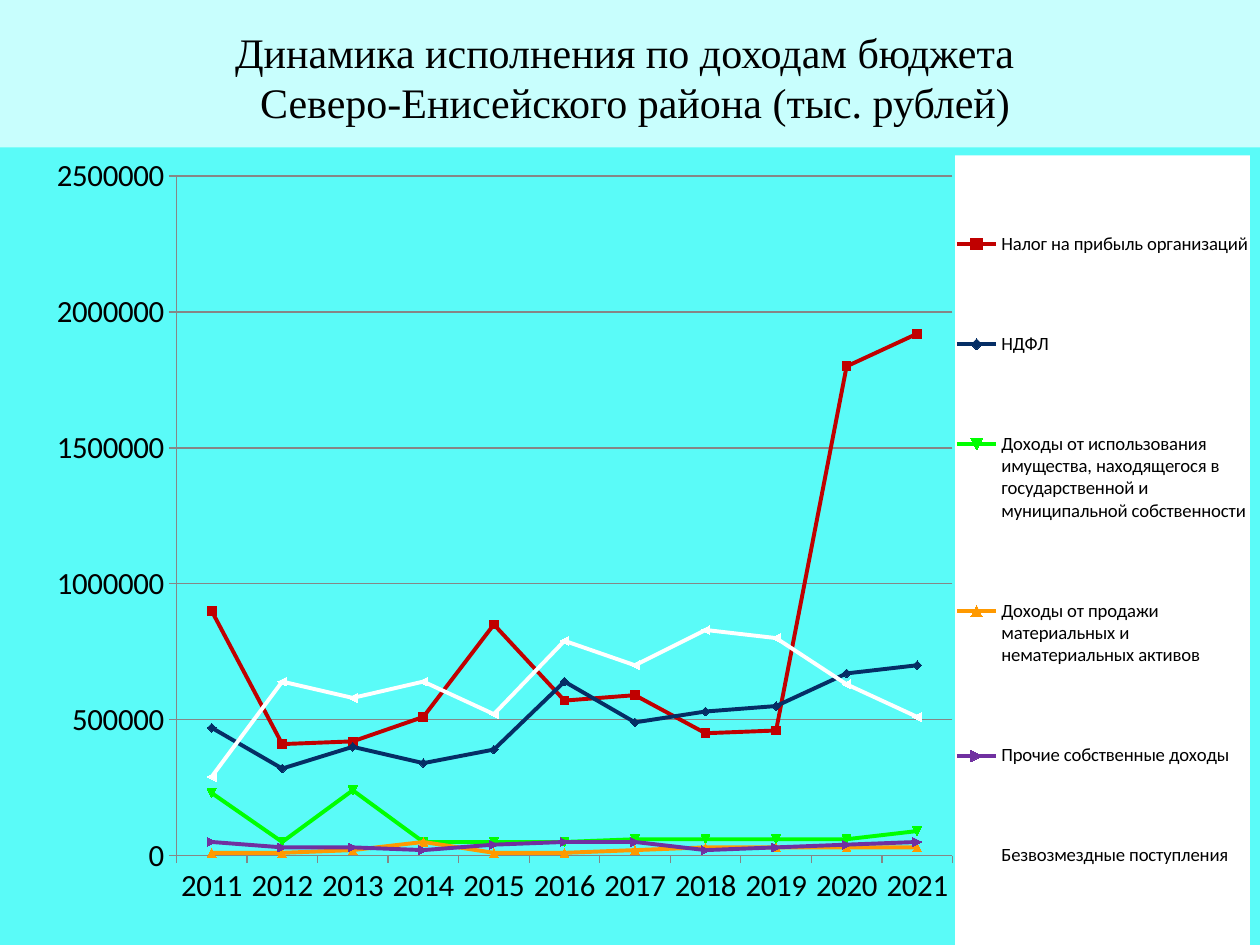
import pptx
import pptx.chart.data
import pptx.dml.color
import pptx.enum.chart
import pptx.enum.text
import pptx.oxml
import pptx.oxml.ns
import pptx.util

TITLE_LINES = [
    "Динамика исполнения по доходам бюджета ",
    " Северо-Енисейского района (тыс. рублей)",
]
YEARS = [str(year) for year in range(2011, 2022)]
# name, line colour, values in tens of thousands
REVENUES = [
    ("Налог на прибыль организаций", "C00000",
     [90, 41, 42, 51, 85, 57, 59, 45, 46, 180, 192]),
    ("НДФЛ", "052E65",
     [47, 32, 40, 34, 39, 64, 49, 53, 55, 67, 70]),
    ("Доходы от использования имущества, находящегося в "
     "государственной и муниципальной собственности", "00FF00",
     [23, 5, 24, 5, 5, 5, 6, 6, 6, 6, 9]),
    ("Доходы от продажи материальных и нематериальных активов", "FF9900",
     [1, 1, 2, 5, 1, 1, 2, 3, 3, 3, 3]),
    ("Прочие собственные доходы", "7030A0",
     [5, 3, 3, 2, 4, 5, 5, 2, 3, 4, 5]),
    ("Безвозмездные поступления", "FFFFFF",
     [29, 64, 58, 64, 52, 79, 70, 83, 80, 63, 51]),
]
UNIT = 10000
THEME = {
    "background": "C8FEFD", "chart": "5AFBF8", "legend": "FFFFFF",
    "text": "000000", "axis": "868686",
    "title_font": "Times New Roman", "chart_font": "Calibri",
    "title_size": 24, "axis_size": 17.6, "legend_size": 10.7,
    "line_width": 2.25, "axis_width": 0.75, "marker_size": 5,
}
WIDTH, HEIGHT = 10, 7.5
TITLE_BOX = (0, 0.16, WIDTH, 0.91)
CHART_TOP = 1.17
# x, y, width, height as shares of the chart
PLOT_SHARE = (0.14, 0.036, 0.616, 0.852)
LEGEND_SHARE = (0.758, 0.01, 0.234, 0.99)


def rgb(name):
    return pptx.dml.color.RGBColor.from_string(name)


def inches(*lengths):
    return [pptx.util.Inches(length) for length in lengths]


def style_font(font, size, face):
    font.size = pptx.util.Pt(size)
    font.name = face
    font.color.rgb = rgb(THEME["text"])


def style_line(line, colour, width):
    line.color.rgb = rgb(colour)
    line.width = pptx.util.Pt(width)


def manual_layout(shares, inner=False):
    target = '<c:layoutTarget val="inner"/>' if inner else ""
    modes = "".join(f'<c:{axis}Mode val="edge"/>' for axis in "xy")
    sizes = "".join(f'<c:{key} val="{share}"/>' for key, share in zip("xywh", shares))
    return pptx.oxml.parse_xml(
        f'<c:layout {pptx.oxml.ns.nsdecls("c")}><c:manualLayout>'
        f"{target}{modes}{sizes}</c:manualLayout></c:layout>")


def solid_area(colour):
    return pptx.oxml.parse_xml(
        f'<c:spPr {pptx.oxml.ns.nsdecls("c", "a")}><a:solidFill>'
        f'<a:srgbClr val="{colour}"/></a:solidFill><a:ln><a:noFill/></a:ln></c:spPr>')


def drop_layout(parent):
    for layout in parent.findall(pptx.oxml.ns.qn("c:layout")):
        parent.remove(layout)


def add_title(slide):
    title = slide.shapes.add_textbox(*inches(*TITLE_BOX)).text_frame
    title.word_wrap = True
    paragraph = title.paragraphs[0]
    paragraph.alignment = pptx.enum.text.PP_ALIGN.CENTER
    for index, line in enumerate(TITLE_LINES):
        if index:
            paragraph.add_line_break()
        run = paragraph.add_run()
        run.text = line
        style_font(run.font, THEME["title_size"], THEME["title_font"])


def style_axes(chart):
    for axis in (chart.category_axis, chart.value_axis):
        axis.major_tick_mark = pptx.enum.chart.XL_TICK_MARK.OUTSIDE
        axis.minor_tick_mark = pptx.enum.chart.XL_TICK_MARK.NONE
        style_line(axis.format.line, THEME["axis"], THEME["axis_width"])
    values = chart.value_axis
    values.minimum_scale, values.maximum_scale, values.major_unit = 0, 2500000, 500000
    values.has_major_gridlines = True
    style_line(values.major_gridlines.format.line, THEME["axis"], THEME["axis_width"])


def style_legend(chart):
    chart.has_legend = True
    legend = chart.legend
    legend.position = pptx.enum.chart.XL_LEGEND_POSITION.RIGHT
    legend.include_in_layout = False
    style_font(legend.font, THEME["legend_size"], THEME["chart_font"])
    root = legend._element
    drop_layout(root)
    overlay = root.find(pptx.oxml.ns.qn("c:overlay"))
    overlay.addprevious(manual_layout(LEGEND_SHARE))
    overlay.addnext(solid_area(THEME["legend"]))


def add_revenue_chart(slide):
    revenue = pptx.chart.data.CategoryChartData(number_format="General")
    revenue.categories = YEARS
    for name, _, values in REVENUES:
        revenue.add_series(name, [value * UNIT for value in values])
    chart = slide.shapes.add_chart(
        pptx.enum.chart.XL_CHART_TYPE.LINE_MARKERS,
        *inches(0, CHART_TOP, WIDTH, HEIGHT - CHART_TOP), revenue).chart
    chart.has_title = False
    style_font(chart.font, THEME["axis_size"], THEME["chart_font"])
    style_axes(chart)
    style_legend(chart)

    plot = chart.plots[0]
    plot.vary_by_categories = False
    for series, (_, colour, _) in zip(plot.series, REVENUES):
        series.smooth = False
        style_line(series.format.line, colour, THEME["line_width"])
        series.marker.size = THEME["marker_size"]
        series.marker.format.fill.solid()
        series.marker.format.fill.fore_color.rgb = rgb(colour)
        style_line(series.marker.format.line, colour, THEME["axis_width"])

    chart_part = chart._chartSpace.find(pptx.oxml.ns.qn("c:chart"))
    chart_part.addnext(solid_area(THEME["chart"]))
    plot_area = chart_part.find(pptx.oxml.ns.qn("c:plotArea"))
    drop_layout(plot_area)
    plot_area.insert(0, manual_layout(PLOT_SHARE, inner=True))


def main():
    deck = pptx.Presentation()
    deck.slide_width, deck.slide_height = inches(WIDTH, HEIGHT)
    slide = deck.slides.add_slide(deck.slide_layouts[6])
    slide.background.fill.solid()
    slide.background.fill.fore_color.rgb = rgb(THEME["background"])
    add_revenue_chart(slide)
    add_title(slide)
    deck.save("out.pptx")


if __name__ == "__main__":
    main()
